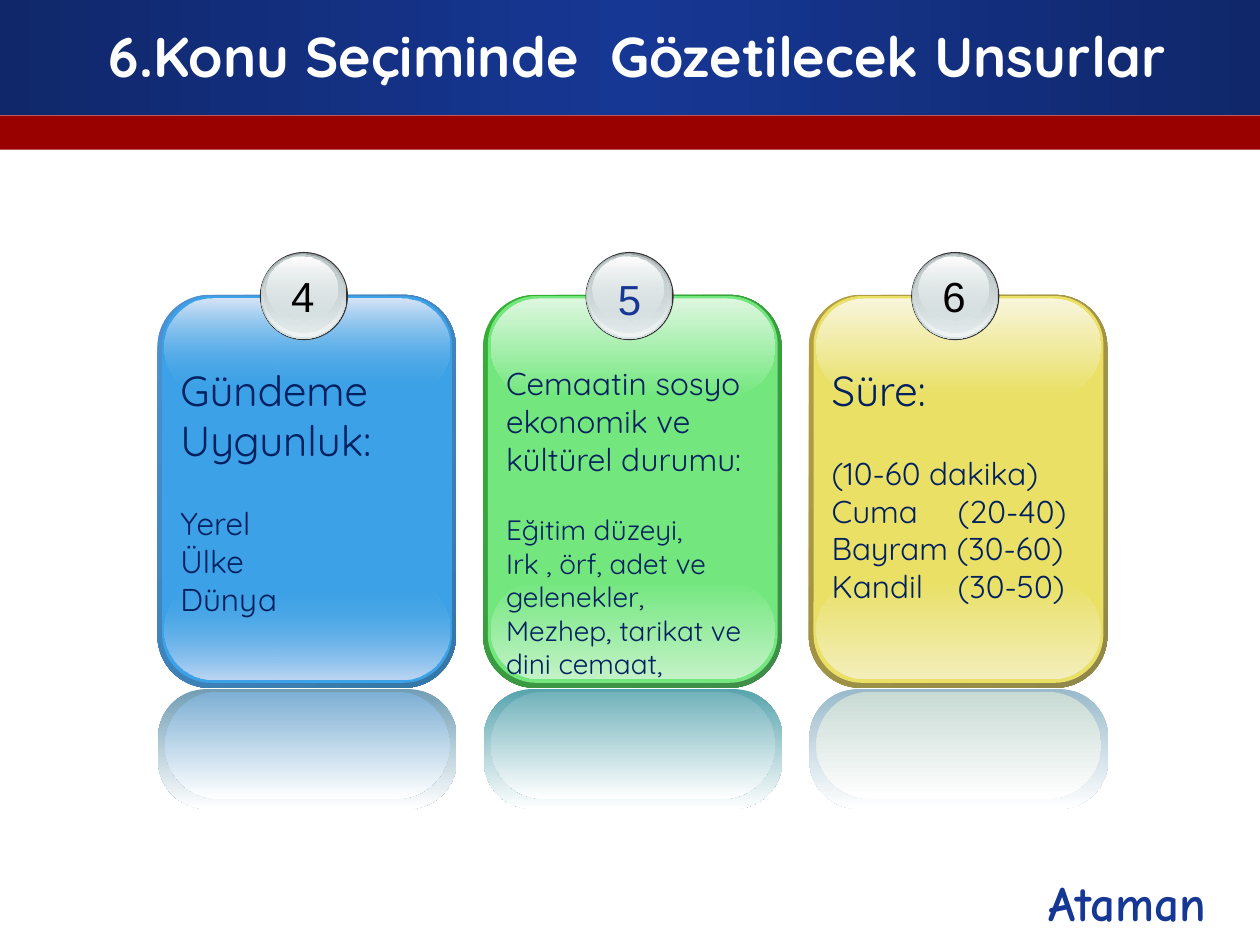
from lxml import etree
from pptx import Presentation
from pptx.dml.color import RGBColor
from pptx.enum.shapes import MSO_SHAPE as Shape
from pptx.enum.text import MSO_ANCHOR as Anchor, PP_ALIGN as Align
from pptx.oxml import parse_xml
from pptx.oxml.ns import nsdecls
from pptx.util import Pt

COLORS = {
    "navy": "10276A", "blue": "163794", "red": "990000", "white": "FFFFFF",
    "black": "000000", "text": "002060", "rim": "333333", "steel": "99A1A2",
    "silver": "D6E1E2", "pearl": "F2F5F5", "ash": "C1CBCC",
}

# Card colours: edge gradient, face, top and bottom gloss, two reflections
CARDS = [
    {"number": "4", "number_color": COLORS["black"], "nudge": 0,
     "edge": ("4E91D4", "3477A4"), "face": "3CA1E6", "alpha": 0,
     "top": "D7E5F7", "bottom": "BDD6F3", "mirror": ("729EB4", "7DAFD4"),
     "heading": "Gündeme Uygunluk:", "sizes": (24, 18), "height": 152.6,
     "lines": ["Yerel", "Ülke", "Dünya"]},
    {"number": "5", "number_color": COLORS["blue"], "nudge": 1.4,
     "edge": ("34B034", "3F8B4A"), "face": "73E77E", "alpha": 100,
     "top": "DDF7DF", "bottom": "C3F2C7", "mirror": ("58A4AE", "72B2BB"),
     "heading": "Cemaatin sosyo ekonomik ve kültürel durumu:",
     "sizes": (18, 16), "height": 188.6,
     "lines": ["Eğitim düzeyi,", "Irk , örf, adet ve gelenekler,",
               "Mezhep, tarikat ve dini cemaat,"]},
    {"number": "6", "number_color": COLORS["black"], "nudge": 0,
     "edge": ("B59F43", "8F8849"), "face": "E9E065", "alpha": 100,
     "top": "F8F5DB", "bottom": "F3EEBB", "mirror": ("99BACC", "C8DAD4"),
     "heading": "Süre:", "sizes": (24, 18), "height": 145.4,
     "lines": ["(10-60 dakika)", "Cuma\t(20-40)", "Bayram (30-60)",
               "Kandil \t(30-50)"]},
]
CARD_LEFT, CARD_PITCH = 90, 186.1


def add_filled(shapes, kind, box, stops, angle=90, corner=None):
    """Add a borderless shape; stops are (colour, alpha %), one stop is solid."""
    shape = shapes.add_shape(kind, *[Pt(value) for value in box])
    shape.shadow.inherit = False
    shape.line.fill.background()
    if corner is not None:
        shape.adjustments[0] = corner
    shape.fill.solid()
    shape.fill.fore_color.rgb = RGBColor.from_string(stops[0][0])
    if len(stops) > 1:
        marks = "".join(
            f'<a:gs pos="{100000 * i // (len(stops) - 1)}"><a:srgbClr val="{color}">'
            f'<a:alpha val="{alpha * 1000}"/></a:srgbClr></a:gs>'
            for i, (color, alpha) in enumerate(stops))
        gradient = parse_xml(
            f'<a:gradFill {nsdecls("a")} rotWithShape="1"><a:gsLst>{marks}</a:gsLst>'
            f'<a:lin ang="{angle * 60000}" scaled="0"/></a:gradFill>')
        properties = shape._element.spPr
        properties.replace(properties.find("{*}solidFill"), gradient)


def add_text(paragraph, text, size, font, color, bold=False):
    run = paragraph.add_run()
    run.text = text
    run.font.size = Pt(size)
    run.font.name = font
    run.font.bold = bold
    run.font.color.rgb = RGBColor.from_string(color)


presentation = Presentation()
presentation.slide_width, presentation.slide_height = Pt(720), Pt(540)
slide = presentation.slides.add_slide(presentation.slide_layouts[5])

# Header bands
add_filled(slide.shapes, Shape.RECTANGLE, (0, 0, 720, 65.5),
           [(COLORS[name], 100) for name in ("navy", "blue", "navy")], angle=0)
add_filled(slide.shapes, Shape.RECTANGLE, (0, 66, 720, 19.5), [(COLORS["red"], 100)])

# Title, brought in front of the bands
title = slide.shapes.title
title.left, title.top, title.width, title.height = Pt(0), Pt(9.4), Pt(728.6), Pt(44.6)
title.text_frame.vertical_anchor = Anchor.MIDDLE
paragraph = title.text_frame.paragraphs[0]
paragraph.alignment = Align.CENTER
add_text(paragraph, "6.Konu Seçiminde  Gözetilecek Unsurlar", 32, "Quicksand",
         COLORS["white"], bold=True)
slide.shapes._spTree.append(title._element)

# Footer name
footer = slide.shapes.add_textbox(Pt(468), Pt(502.6), Pt(228.2), Pt(25.2))
footer.text_frame.word_wrap = True
footer.text_frame.vertical_anchor = Anchor.MIDDLE
paragraph = footer.text_frame.paragraphs[0]
paragraph.alignment = Align.RIGHT
add_text(paragraph, "Ataman", 28, "Comic Neue", COLORS["blue"], bold=True)

# Layers of the numbered ball: offset from card, top, width, height, stops
BALL = [
    (58.5, 144, 50.4, 50.4, [("rim", 100)]),
    (59, 144.6, 49, 49, [("steel", 100), ("silver", 100)]),
    (59.7, 144.8, 47.5, 47.5, [("silver", 0), ("pearl", 100)]),
    (60.4, 145.4, 45.4, 44.6, [("ash", 100), ("silver", 48)]),
    (62.5, 146.9, 40.3, 36, [("white", 100), ("silver", 38)]),
]

for index, card in enumerate(CARDS):
    left = CARD_LEFT + index * CARD_PITCH
    group = slide.shapes.add_group_shape().shapes
    face, clear = (card["face"], 100), (card["face"], card["alpha"])

    # Card body, gloss and reflection
    layers = [
        (0, 168.5, 170.6, 224.6, 0.175, [(color, 100) for color in card["edge"]], 45),
        (2.7, 169.2, 165.6, 221, 0.167, [face], 90),
        (4.3, 331.9, 162.7, 56.2, 0.5, [clear, (card["bottom"], 100)], 90),
        (4.3, 170.6, 162.7, 55.4, 0.5, [(card["top"], 100), clear], 90),
        (0.4, 393.8, 170.6, 68.4, 0.404,
         [(card["mirror"][0], 100), (COLORS["white"], 100)], 90),
        (4.3, 395.3, 162.7, 61.2, 0.5,
         [(card["mirror"][1], 100), (COLORS["white"], 100)], 90),
    ]
    for offset, top, width, height, corner, stops, angle in layers:
        add_filled(group, Shape.ROUNDED_RECTANGLE, (left + offset, top, width, height),
                   stops, angle, corner)

    # Numbered ball
    for offset, top, width, height, stops in BALL:
        add_filled(group, Shape.OVAL, (left + offset, top, width, height),
                   [(COLORS[name], alpha) for name, alpha in stops])
    nudge = card["nudge"]
    number = group.add_textbox(Pt(left + 69 + nudge / 2), Pt(151.2 + nudge),
                               Pt(28), Pt(36.7))
    number.text_frame.word_wrap = False
    paragraph = number.text_frame.paragraphs[0]
    paragraph.alignment = Align.CENTER
    add_text(paragraph, card["number"], 24, "Arial", card["number_color"])

    # Heading and lines, one line of space between them
    body = group.add_textbox(Pt(left + 6), Pt(204.5), Pt(162), Pt(card["height"]))
    frame = body.text_frame
    frame.word_wrap = True
    heading_size, line_size = card["sizes"]
    add_text(frame.paragraphs[0], card["heading"], heading_size, "Quicksand",
             COLORS["text"])
    for position, line in enumerate(card["lines"]):
        paragraph = frame.add_paragraph()
        if position == 0:
            paragraph.space_before = Pt(line_size * 1.25)
        add_text(paragraph, line, line_size, "Quicksand", COLORS["text"])

presentation.save("out.pptx")
